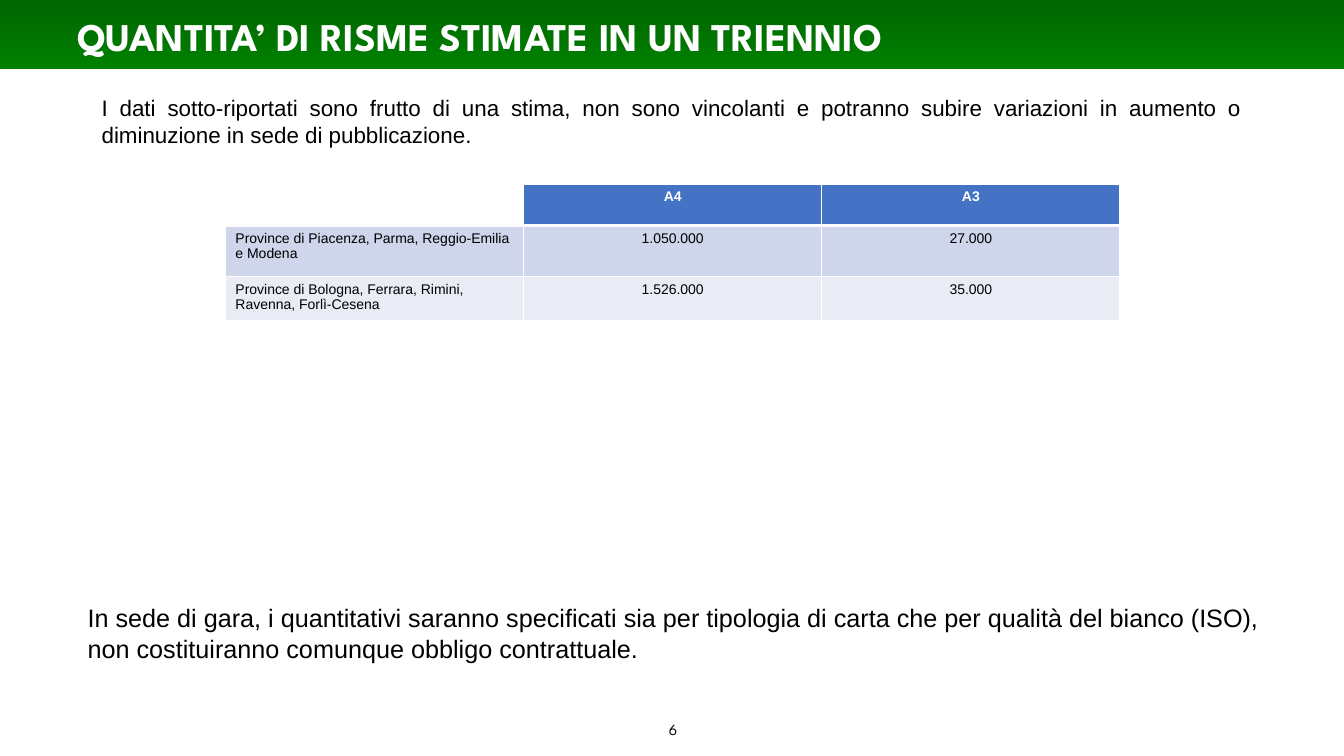
from lxml import etree
from pptx import Presentation
from pptx.dml.color import RGBColor
from pptx.enum.shapes import MSO_SHAPE
from pptx.enum.text import MSO_ANCHOR, MSO_AUTO_SIZE, PP_ALIGN
from pptx.oxml.ns import qn
from pptx.util import Pt

RECTANGLE = MSO_SHAPE.RECTANGLE
MIDDLE = MSO_ANCHOR.MIDDLE
NO_AUTOFIT = MSO_AUTO_SIZE.NONE
LEFT, CENTER, JUSTIFY = PP_ALIGN.LEFT, PP_ALIGN.CENTER, PP_ALIGN.JUSTIFY
TITLE_ONLY = 5
WHITE, BLACK = "FFFFFF", "000000"


def rgb(value):
    return RGBColor.from_string(value)


def write(tf, text, size, align=LEFT, font="Arial", color=BLACK, bold=False):
    """Put one formatted run in the first paragraph of a text frame."""
    tf.word_wrap = True
    p = tf.paragraphs[0]
    p.alignment = align
    r = p.add_run()
    r.text = text
    r.font.name = font
    r.font.size = Pt(size)
    r.font.bold = bold
    r.font.color.rgb = rgb(color)


prs = Presentation()
prs.slide_width, prs.slide_height = Pt(960), Pt(540)
s = prs.slides.add_slide(prs.slide_layouts[TITLE_ONLY])

# Green banner, placed behind the title
banner = s.shapes.add_shape(RECTANGLE, 0, 0, prs.slide_width, Pt(49.5))
banner.shadow.inherit = False
banner.line.fill.background()
banner.fill.gradient()
banner.fill.gradient_angle = 270
for stop, color, position in zip(banner.fill.gradient_stops, ("006600", "008000"), (0, 1)):
    stop.color.rgb = rgb(color)
    stop.position = position
s.shapes._spTree.insert(2, banner._element)

title = s.shapes.title
title.left, title.top, title.width, title.height = Pt(48), Pt(8.5), Pt(865), Pt(34)
tf = title.text_frame
tf.auto_size = NO_AUTOFIT
tf.vertical_anchor = MIDDLE
write(tf, "QUANTITA’ DI RISME STIMATE IN UN TRIENNIO", 28,
      font="League Spartan", color=WHITE, bold=True)

# Body texts and page number
intro = ("I dati sotto-riportati sono frutto di una stima, non sono vincolanti e potranno "
         "subire variazioni in aumento o diminuzione in sede di pubblicazione.")
closing = ("In sede di gara, i quantitativi saranno specificati sia per tipologia di carta che "
           "per qualità del bianco (ISO), non costituiranno comunque obbligo contrattuale.")
for text, left, top, width, height, size, align, font in (
    (intro, 65.5, 64, 828.5, 46, 16, JUSTIFY, "Arial"),
    (closing, 55.5, 427, 865, 51, 18, LEFT, "Arial"),
    ("6", 381, 510.5, 199.5, 19.5, 11, CENTER, "League Spartan"),
):
    box = s.shapes.add_textbox(Pt(left), Pt(top), Pt(width), Pt(height))
    write(box.text_frame, text, size, align, font)

# Estimated reams by area and paper size
rows = (
    ("", "A4", "A3"),
    ("Province di Piacenza, Parma, Reggio-Emilia e Modena", "1.050.000", "27.000"),
    ("Province di Bologna, Ferrara, Rimini, Ravenna, Forlì-Cesena", "1.526.000", "35.000"),
)
row_heights = (29.5, 36.5, 29.5)
row_fills = ("4472C4", "CFD5EA", "E9EBF5")
table = s.shapes.add_table(3, 3, Pt(161), Pt(131.5), Pt(639), Pt(sum(row_heights))).table
for column in table.columns:
    column.width = Pt(213)

for i, row in enumerate(rows):
    table.rows[i].height = Pt(row_heights[i])
    for j, text in enumerate(row):
        cell = table.cell(i, j)
        tcPr = cell._tc.get_or_add_tcPr()
        for side in "LRTB":
            under_header = (i, side) in ((0, "B"), (1, "T"))
            ln = etree.SubElement(tcPr, qn(f"a:ln{side}"), w=str(Pt(3 if under_header else 1)))
            line_fill = etree.SubElement(ln, qn("a:solidFill"))
            etree.SubElement(line_fill, qn("a:srgbClr"), val=WHITE)
        cell.fill.solid()
        cell.fill.fore_color.rgb = rgb(row_fills[i] if text else WHITE)
        if text:
            header = i == 0
            write(cell.text_frame, text, 10, CENTER if j else LEFT,
                  color=WHITE if header else BLACK, bold=header)
        else:
            cell.text_frame.paragraphs[0].font.size = Pt(10)

prs.save("out.pptx")
